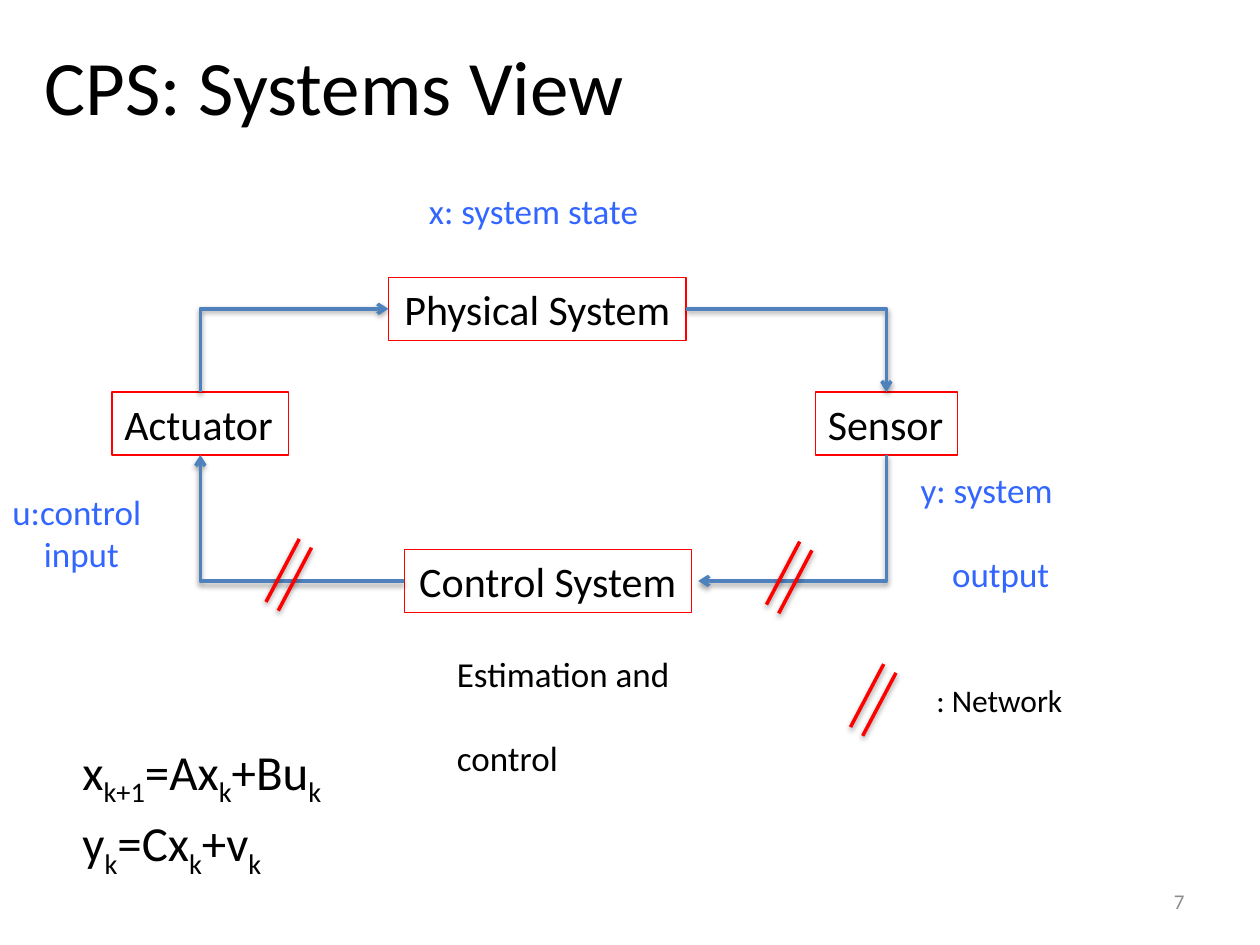
from pptx import Presentation
from pptx.dml.color import RGBColor
from pptx.enum import shapes, text
from pptx.oxml import parse_xml
from pptx.oxml.ns import nsdecls
from pptx.util import Pt

BLACK = RGBColor(0, 0, 0)
GREY = RGBColor(0x8C, 0x8C, 0x8C)
RED = RGBColor(0xFF, 0, 0)
STEEL = RGBColor(0x4F, 0x81, 0xBD)
BLUE = RGBColor(0x33, 0x66, 0xFF)
FONT = "Calibri"
LEFT, CENTER, RIGHT = text.PP_ALIGN.LEFT, text.PP_ALIGN.CENTER, text.PP_ALIGN.RIGHT
TOP, MIDDLE = text.MSO_ANCHOR.TOP, text.MSO_ANCHOR.MIDDLE


def style_paragraph(paragraph, size, color, align=LEFT):
    paragraph.alignment = align
    paragraph.font.name = FONT
    paragraph.font.size = Pt(size)
    paragraph.font.color.rgb = color


def add_label(slide, box, lines, size, color, align=LEFT, anchor=TOP,
              wrap=False, indent=0, gap=0):
    frame = slide.shapes.add_textbox(*map(Pt, box)).text_frame
    frame.word_wrap = wrap
    frame.vertical_anchor = anchor
    if not wrap:
        frame.auto_size = text.MSO_AUTO_SIZE.SHAPE_TO_FIT_TEXT
    for index, line in enumerate(lines):
        paragraph = frame.paragraphs[0] if index == 0 else frame.add_paragraph()
        paragraph.text = line
        style_paragraph(paragraph, size, color, align)
        if index:
            paragraph.space_before = Pt(gap)
            paragraph._p.get_or_add_pPr().set("marL", str(Pt(indent)))


def add_block(slide, box, name, align=CENTER):
    shape = slide.shapes.add_shape(shapes.MSO_SHAPE.RECTANGLE, *map(Pt, box))
    shape.shadow.inherit = False
    shape.fill.background()
    shape.line.color.rgb = RED
    shape.line.width = Pt(0.75)
    frame = shape.text_frame
    frame.word_wrap = False
    frame.vertical_anchor = TOP
    frame.auto_size = text.MSO_AUTO_SIZE.SHAPE_TO_FIT_TEXT
    frame.text = name
    style_paragraph(frame.paragraphs[0], 24, BLACK, align)


def side(box, across, down):
    left, top, width, height = box
    return left + width * across, top + height * down


def add_line(slide, kind, start, end, color):
    line = slide.shapes.add_connector(kind, *map(Pt, start + end))
    line.line.color.rgb = color
    line.line.width = Pt(2)
    return line


def add_elbow(slide, start, end, quarter_turns):
    center_x, center_y = (start[0] + end[0]) / 2, (start[1] + end[1]) / 2
    half_x, half_y = abs(end[0] - start[0]) / 2, abs(end[1] - start[1]) / 2
    if quarter_turns % 2:
        half_x, half_y = half_y, half_x
    elbow = add_line(slide, shapes.MSO_CONNECTOR.ELBOW,
                     (center_x - half_x, center_y - half_y),
                     (center_x + half_x, center_y + half_y), STEEL)
    properties = elbow._element.spPr
    properties.prstGeom.set("prst", "bentConnector2")
    properties.xfrm.set("rot", str(quarter_turns * 90 * 60000))
    elbow.line._get_or_add_ln().append(
        parse_xml(f'<a:tailEnd {nsdecls("a")} type="arrow"/>'))


def add_network_mark(slide, left, top):
    for shift_x, shift_y in ((0, 0), (7, 5)):
        add_line(slide, shapes.MSO_CONNECTOR.STRAIGHT,
                 (left + 19 + shift_x, top + shift_y),
                 (left + shift_x, top + 36 + shift_y), RED)


def add_control_loop(slide, left, top):
    physical = (left + 158, top, 170, 36)
    control = (left + 167, top + 155.5, 164, 36)
    sensor = (left + 402, top + 65.5, 81, 36)
    actuator = (left, top + 65.5, 101, 36)
    add_block(slide, physical, "Physical System")
    add_block(slide, control, "Control System")
    add_block(slide, sensor, "Sensor", LEFT)
    add_block(slide, actuator, "Actuator", LEFT)

    control_x, control_y = side(control, 1, 0.5)
    add_elbow(slide, side(physical, 1, 0.5), side(sensor, 0.5, 0), 0)
    add_elbow(slide, side(sensor, 0.5, 1), (control_x + 4, control_y), 1)
    add_elbow(slide, side(control, 0, 0.5), side(actuator, 0.5, 1), 2)
    add_elbow(slide, side(actuator, 0.5, 0), side(physical, 0, 0.5), 3)

    add_label(slide, (left + 455, top + 105.5, 92, 55), ["y: system", "output"],
              20, BLUE, indent=18, gap=24)
    add_label(slide, (left - 64, top + 118, 89, 55), ["u:control", "input"],
              20, BLUE, indent=18)
    add_label(slide, (left + 174, top - 53.5, 137, 32), ["x: system state"], 20, BLUE)
    add_label(slide, (left + 190, top + 211, 138, 55), ["Estimation and", "control"],
              20, BLACK, gap=24)
    add_network_mark(slide, left + 374, top + 151)
    add_network_mark(slide, left + 88, top + 149.5)


def add_legend(slide, left, top):
    add_network_mark(slide, left, top)
    add_label(slide, (left + 42, top + 6, 88, 29), [": Network"], 18, BLACK)


def add_equations(slide, left, top):
    equations = (
        (158, ("x", "k+1", "=Ax", "k", "+Bu", "k")),
        (121, ("y", "k", "=Cx", "k", "+v", "k")),
    )
    for row, (width, parts) in enumerate(equations):
        box = slide.shapes.add_textbox(Pt(left), Pt(top + row * 41), Pt(width), Pt(41))
        box.text_frame.word_wrap = False
        box.text_frame.auto_size = text.MSO_AUTO_SIZE.SHAPE_TO_FIT_TEXT
        paragraph = box.text_frame.paragraphs[0]
        style_paragraph(paragraph, 28, BLACK)
        for index, part in enumerate(parts):
            run = paragraph.add_run()
            run.text = part
            if index % 2:
                run._r.get_or_add_rPr().set("baseline", "-25000")


def main():
    presentation = Presentation()
    presentation.slide_width, presentation.slide_height = Pt(720), Pt(540)
    slide = presentation.slides.add_slide(presentation.slide_layouts[6])
    add_label(slide, (18.5, 12, 411, 73), ["CPS: Systems View"], 44, BLACK,
              anchor=MIDDLE, wrap=True)
    add_label(slide, (516, 500.5, 168, 29), ["7"], 12, GREY, RIGHT, MIDDLE, True)
    add_control_loop(slide, 64, 158.5)
    add_legend(slide, 486, 379.5)
    add_equations(slide, 40, 420)
    presentation.save("out.pptx")


if __name__ == "__main__":
    main()
